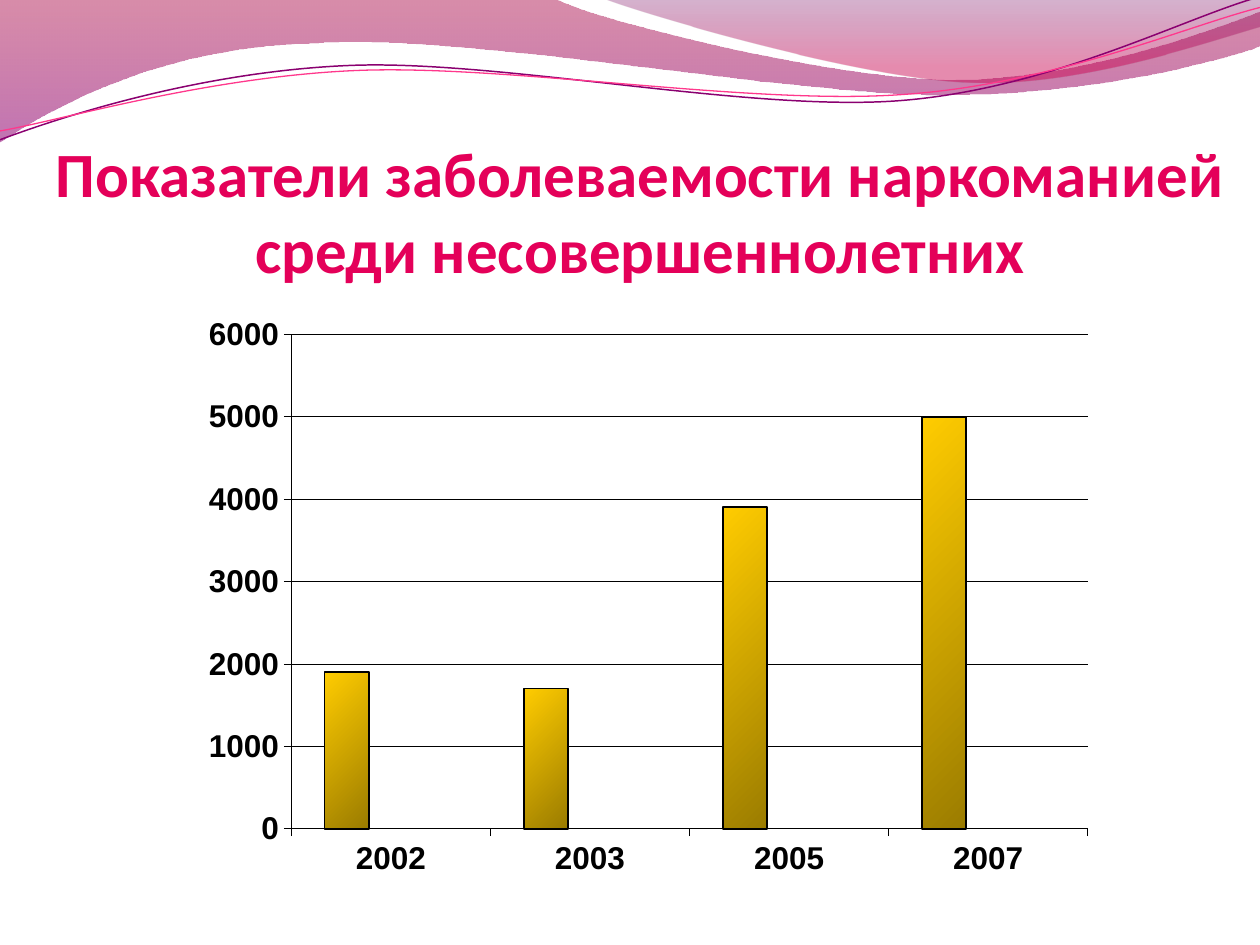
from dataclasses import dataclass
from math import cos, radians, sin

from lxml.etree import SubElement
from pptx import Presentation
from pptx.chart.data import CategoryChartData
from pptx.dml.color import RGBColor
from pptx.enum.chart import XL_CHART_TYPE, XL_TICK_LABEL_POSITION, XL_TICK_MARK
from pptx.enum.text import MSO_ANCHOR, PP_ALIGN
from pptx.oxml.ns import qn
from pptx.util import Inches, Pt


@dataclass(frozen=True)
class Theme:
    """Colours, fonts and type sizes of the slide."""
    title: str = "E40059"
    ink: str = "000000"
    plum: str = "8A0070"
    pink: str = "FF388C"
    empty_series: tuple = ("E40059", "17BBFD")
    left_wave: tuple = (
        (0, "A90042", (("alpha", 45000),)), (100, "8E0073", (("alpha", 55000),)))
    right_wave: tuple = (
        (0, "73005E", (("alpha", 30000),)), (80, "C9004F", (("alpha", 45000),)))
    bars: tuple = (
        (0, "FFCC00", ()),
        (100, "FFCC00", (("gamma", None), ("shade", 61176), ("invGamma", None))))
    title_font: str = "Calibri"
    chart_font: str = "Arial"
    title_size: int = 36
    chart_size: int = 18


THEME = Theme()
STRAND_TILT = -2.7

LEFT_WAVE = [
    (0, 0), (4.4, -0.01),
    (4.76, 0.17, 6.64, 0.63, 7.58, 0.63), (8.53, 0.63, 9.58, 0.26, 10, 0.09),
    (10.01, 0.36),
    (9.83, 0.44, 8.7, 0.76, 7.46, 0.75), (6.22, 0.75, 3.82, 0.28, 2.57, 0.34),
    (1.29, 0.36, 0.46, 0.83, -0.01, 1.13), (0, 0),
]
RIGHT_WAVE = [
    (4.79, -0.01),
    (5.09, 0.11, 6.82, 0.62, 7.69, 0.65), (8.56, 0.69, 9.61, 0.32, 10, 0.21),
    (10, 0), (4.79, -0.01),
]
PLUM_STRAND = [
    (0, 1.11),
    (0.48, 0.93, 1.58, 0.57, 2.77, 0.52), (3.95, 0.47, 5.93, 0.89, 7.13, 0.8),
    (8.33, 0.71, 9.38, 0.15, 9.98, -0.02),
]
PINK_STRAND = [
    (0, 1.04),
    (0.47, 0.96, 1.64, 0.61, 2.83, 0.56), (4.03, 0.51, 5.97, 0.84, 7.17, 0.75),
    (8.36, 0.67, 9.41, 0.21, 10, 0.06),
]


def rgb(value):
    """Turn a hex string into a colour."""
    return RGBColor.from_string(value)


def set_gradient(properties, fill, stops, angle):
    """Fill a shape or series with a linear gradient of modified colours."""
    fill.background()
    gradient = properties.makeelement(qn("a:gradFill"), {"rotWithShape": "1"})
    stop_list = SubElement(gradient, qn("a:gsLst"))
    for position, value, modifiers in stops:
        stop = SubElement(stop_list, qn("a:gs"), pos=str(position * 1000))
        color = SubElement(stop, qn("a:srgbClr"), val=value)
        for name, amount in modifiers:
            modifier = SubElement(color, qn(f"a:{name}"))
            if amount is not None:
                modifier.set("val", str(amount))
    SubElement(gradient, qn("a:lin"), ang=str(angle * 60000), scaled="0")
    properties.replace(properties.find(qn("a:noFill")), gradient)


def set_line(line, color, width):
    """Give a line its colour and width."""
    line.color.rgb = rgb(color)
    line.width = Pt(width)


def pairs(segment):
    """Split a flat segment into its points."""
    return list(zip(segment[::2], segment[1::2]))


def turn(outline, degrees):
    """Rotate an outline about the midpoint between its ends."""
    ends = outline[0], outline[-1][-2:]
    middle_x, middle_y = (sum(axis) / 2 for axis in zip(*ends))
    c, s = cos(radians(degrees)), sin(radians(degrees))
    return [
        tuple(value for x, y in pairs(segment) for value in (
            middle_x + (x - middle_x) * c - (y - middle_y) * s,
            middle_y + (x - middle_x) * s + (y - middle_y) * c))
        for segment in outline]


def add_outline(slide, outline, closed):
    """Draw straight and cubic segments as a freeform without shadow."""
    ends = [(Inches(x), Inches(y)) for x, y in (part[-2:] for part in outline)]
    builder = slide.shapes.build_freeform(*ends[0])
    builder.add_line_segments(ends[1:], close=closed)
    curve = builder.convert_to_shape()
    curve.shadow.inherit = False
    steps = list(curve._element.iter(qn("a:lnTo")))
    for step, segment in zip(steps, outline[1:]):
        if len(segment) == 2:
            continue
        cubic = step.makeelement(qn("a:cubicBezTo"), {})
        for x, y in pairs(segment):
            SubElement(cubic, qn("a:pt"), x=str(Inches(x) - curve.left),
                       y=str(Inches(y) - curve.top))
        step.getparent().replace(step, cubic)
    return curve


def add_wave(slide, outline, stops):
    """Add a translucent wave."""
    wave = add_outline(slide, outline, True)
    set_gradient(wave._element.spPr, wave.fill, stops, 90)
    wave.line.fill.background()


def add_strand(slide, outline, color, width):
    """Add a thin tilted strand."""
    strand = add_outline(slide, turn(outline, -STRAND_TILT), False)
    strand.rotation = STRAND_TILT
    strand.fill.background()
    set_line(strand.line, color, width)


def set_font(font, name, size, color):
    """Apply a bold typeface with size and colour."""
    font.name = name
    font.size = Pt(size)
    font.bold = True
    font.color.rgb = rgb(color)


def add_title(slide, wording):
    """Add the centred heading."""
    frame = slide.shapes.add_textbox(
        Inches(0.16), Inches(1.02), Inches(9.84), Inches(1.25)).text_frame
    frame.word_wrap = True
    frame.vertical_anchor = MSO_ANCHOR.BOTTOM
    frame.margin_left = frame.margin_right = frame.margin_bottom = 0
    frame.margin_top = Inches(0.05)
    heading = frame.paragraphs[0]
    heading.alignment = PP_ALIGN.CENTER
    run = heading.add_run()
    run.text = wording
    set_font(run.font, THEME.title_font, THEME.title_size, THEME.title)


def set_plot_layout(chart, **bounds):
    """Fix the inner plot area as fractions of the chart."""
    plot_area = chart._chartSpace.chart.plotArea
    for previous in plot_area.findall(qn("c:layout")):
        plot_area.remove(previous)
    layout = plot_area.makeelement(qn("c:layout"), {})
    plot_area.insert(0, layout)
    manual = SubElement(layout, qn("c:manualLayout"))
    settings = {"layoutTarget": "inner", "xMode": "edge", "yMode": "edge", **bounds}
    for key, value in settings.items():
        SubElement(manual, qn(f"c:{key}"), val=str(value))


def style_axis(axis):
    """Style an axis with thin lines and bold labels."""
    axis.major_tick_mark = XL_TICK_MARK.OUTSIDE
    axis.minor_tick_mark = XL_TICK_MARK.NONE
    set_font(axis.tick_labels.font, THEME.chart_font, THEME.chart_size, THEME.ink)
    set_line(axis.format.line, THEME.ink, 0.25)


def add_incidence_chart(slide):
    """Add the column chart of yearly incidence."""
    incidence = CategoryChartData()
    incidence.categories = ["2002", "2003", "2005", "2007"]
    incidence.add_series("Series 1", (1900, 1700, 3900, 5000))
    for name in ("Series 2", "Series 3"):
        incidence.add_series(name, (None,) * 4)
    chart = slide.shapes.add_chart(
        XL_CHART_TYPE.COLUMN_CLUSTERED, Inches(1.46), Inches(2.39),
        Inches(7.29), Inches(4.87), incidence).chart
    chart.has_legend = chart.has_title = False
    set_font(chart.font, THEME.chart_font, THEME.chart_size, THEME.ink)
    set_plot_layout(chart, x=0.117, y=0.054, w=0.867, h=0.806)

    years, cases = chart.category_axis, chart.value_axis
    style_axis(years)
    style_axis(cases)
    years.tick_label_position = XL_TICK_LABEL_POSITION.LOW
    cases.has_major_gridlines = True
    set_line(cases.major_gridlines.format.line, THEME.ink, 0.25)

    plot = chart.plots[0]
    plot.vary_by_categories = False
    plot.gap_width, plot.overlap = 150, 0
    counted, *empty = plot.series
    for series in plot.series:
        set_line(series.format.line, THEME.ink, 1)
    set_gradient(counted._element.spPr, counted.format.fill, THEME.bars, 45)
    for series, color in zip(empty, THEME.empty_series):
        series.format.fill.solid()
        series.format.fill.fore_color.rgb = rgb(color)


def main():
    """Build and save the slide."""
    deck = Presentation()
    deck.slide_width, deck.slide_height = Inches(10), Inches(7.5)
    slide = deck.slides.add_slide(deck.slide_layouts[6])
    add_wave(slide, LEFT_WAVE, THEME.left_wave)
    add_wave(slide, RIGHT_WAVE, THEME.right_wave)
    add_strand(slide, PLUM_STRAND, THEME.plum, 0.85)
    add_strand(slide, PINK_STRAND, THEME.pink, 0.75)
    add_title(slide, "Показатели заболеваемости наркоманией среди несовершеннолетних")
    add_incidence_chart(slide)
    deck.save("out.pptx")


if __name__ == "__main__":
    main()
